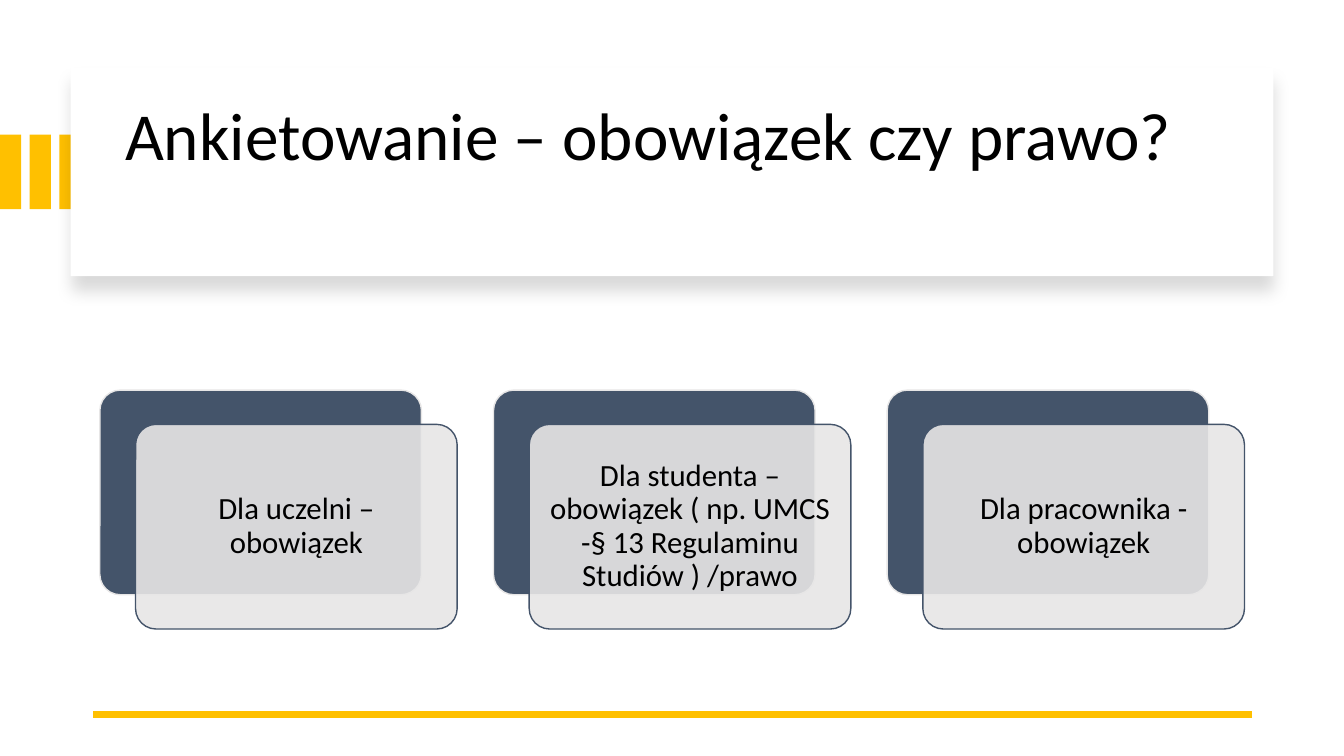
from lxml.etree import SubElement
from pptx import Presentation
from pptx.dml.color import RGBColor
from pptx.enum.shapes import MSO_CONNECTOR, MSO_SHAPE
from pptx.enum.text import MSO_ANCHOR, PP_ALIGN
from pptx.oxml.ns import qn
from pptx.util import Inches, Pt

GOLD, NAVY, SILVER, WHITE, BLACK = "FFC000", "44546A", "E7E6E6", "FFFFFF", "000000"
TITLE = "Ankietowanie – obowiązek czy prawo?"
CARDS = [
    "Dla uczelni – obowiązek",
    "Dla studenta – obowiązek ( np. UMCS -§ 13 Regulaminu Studiów ) /prawo",
    "Dla pracownika - obowiązek",
]


def color(hex_text):
    return RGBColor.from_string(hex_text)


class SlideBuilder:
    """Draws on one page; every position and size is a percentage of the page."""

    font = "Calibri"

    def __init__(self, deck):
        self.deck = deck
        self.page = deck.slides.add_slide(deck.slide_layouts[5])
        self.shapes = self.page.shapes

    def across(self, share):
        return round(self.deck.slide_width * share / 100)

    def down(self, share):
        return round(self.deck.slide_height * share / 100)

    def area(self, left, top, width, height):
        return self.across(left), self.down(top), self.across(width), self.down(height)

    def set_text(self, shape, text, size, align):
        frame = shape.text_frame
        frame.text = text
        frame.word_wrap = True
        frame.vertical_anchor = MSO_ANCHOR.MIDDLE
        para = frame.paragraphs[0]
        para.alignment = align
        para.line_spacing = 0.9
        font = para.runs[0].font
        font.name, font.size = self.font, Pt(size)
        font.color.rgb = color(BLACK)
        return frame

    def box(self, group, area, fill, line=None, kind=MSO_SHAPE.RECTANGLE):
        shape = group.shapes.add_shape(kind, *self.area(*area))
        shape.shadow.inherit = False
        shape.fill.solid()
        shape.fill.fore_color.rgb = color(fill)
        if line:
            shape.line.color.rgb = color(line)
            shape.line.width = Pt(1)
        else:
            shape.line.fill.background()
        return shape

    def rounded(self, group, area, fill, line):
        shape = self.box(group, area, fill, line, MSO_SHAPE.ROUNDED_RECTANGLE)
        shape.adjustments[0] = 0.1
        return shape

    def stripes(self, count, top, width, height, pitch):
        group = self.shapes.add_group_shape()
        for index in range(count):
            self.box(group, (index * pitch, top, width, height), GOLD)

    def panel(self, *area):
        """White rectangle with a soft shadow falling downwards."""
        shape = self.box(self.page, area, WHITE)
        effects = shape._element.spPr.find(qn("a:effectLst"))
        shadow = SubElement(effects, qn("a:outerShdw"), blurRad=str(Pt(11)),
                            dist=str(Pt(10)), dir="5400000", algn="t", rotWithShape="0")
        tint = SubElement(shadow, qn("a:srgbClr"), val=BLACK)
        SubElement(tint, qn("a:alpha"), val="15000")

    def title(self, text, *area):
        title = self.shapes.title
        title.left, title.top, title.width, title.height = self.area(*area)
        frame = self.set_text(title, text, 48, PP_ALIGN.LEFT)
        frame.margin_bottom = Inches(0.78)
        self.shapes._spTree.append(title._element)  # in front of the panel

    def rule(self, left, right, top):
        line = self.shapes.add_connector(
            MSO_CONNECTOR.STRAIGHT, self.across(right), self.down(top),
            self.across(left), self.down(top))
        line.line.color.rgb = color(GOLD)
        line.line.width = Pt(4.5)
        SubElement(line._element.spPr, qn("a:effectLst"))

    def card(self, group, text, left, top, width, height):
        """Dark plate with a translucent text plate shifted down and right."""
        self.rounded(group, (left, top, width, height), NAVY, SILVER)
        front = self.rounded(group, (left + 2.66, top + 4.53, width, height), SILVER, NAVY)
        tint = front._element.spPr.find(qn("a:solidFill"))[0]
        SubElement(tint, qn("a:alpha"), val="90000")
        frame = self.set_text(front, text, 22, PP_ALIGN.CENTER)
        frame.margin_left = frame.margin_right = Inches(0.09)
        frame.margin_top = frame.margin_bottom = Inches(0.09)


def main():
    deck = Presentation()
    deck.slide_width, deck.slide_height = Inches(13.33), Inches(7.5)
    slide = SlideBuilder(deck)
    slide.stripes(3, top=17.8, width=1.58, height=9.87, pitch=2.21)
    slide.panel(5.25, 8.93, 89.5, 27.6)
    slide.title(TITLE, 8.55, 11.87, 83.5, 22.67)
    slide.rule(left=6.9, right=93.17, top=94.53)
    cards = slide.shapes.add_group_shape()
    for index, text in enumerate(CARDS):
        slide.card(cards, text, 7.43 + index * 29.29, 51.6, 23.93, 27.07)
    deck.save("out.pptx")


if __name__ == "__main__":
    main()
